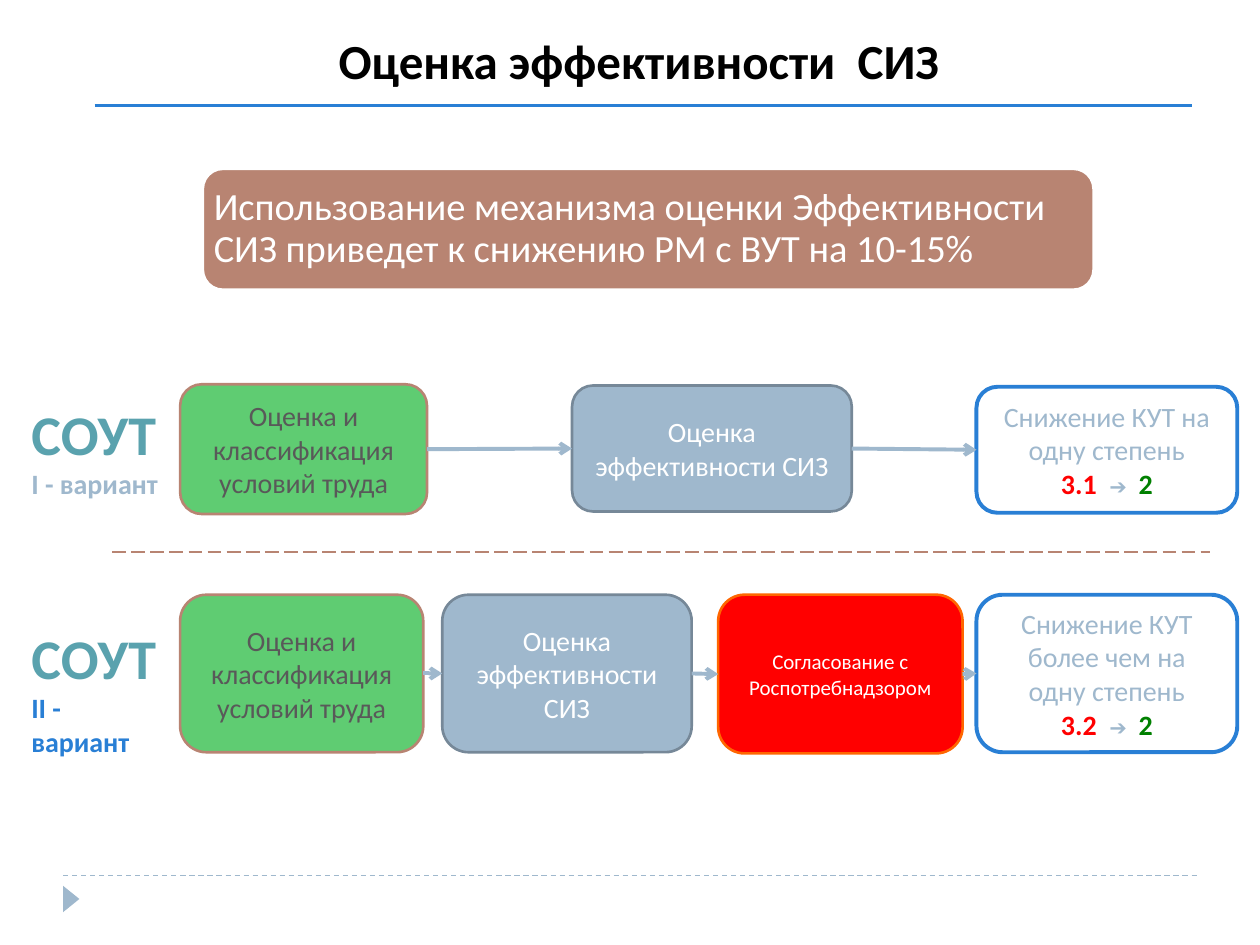
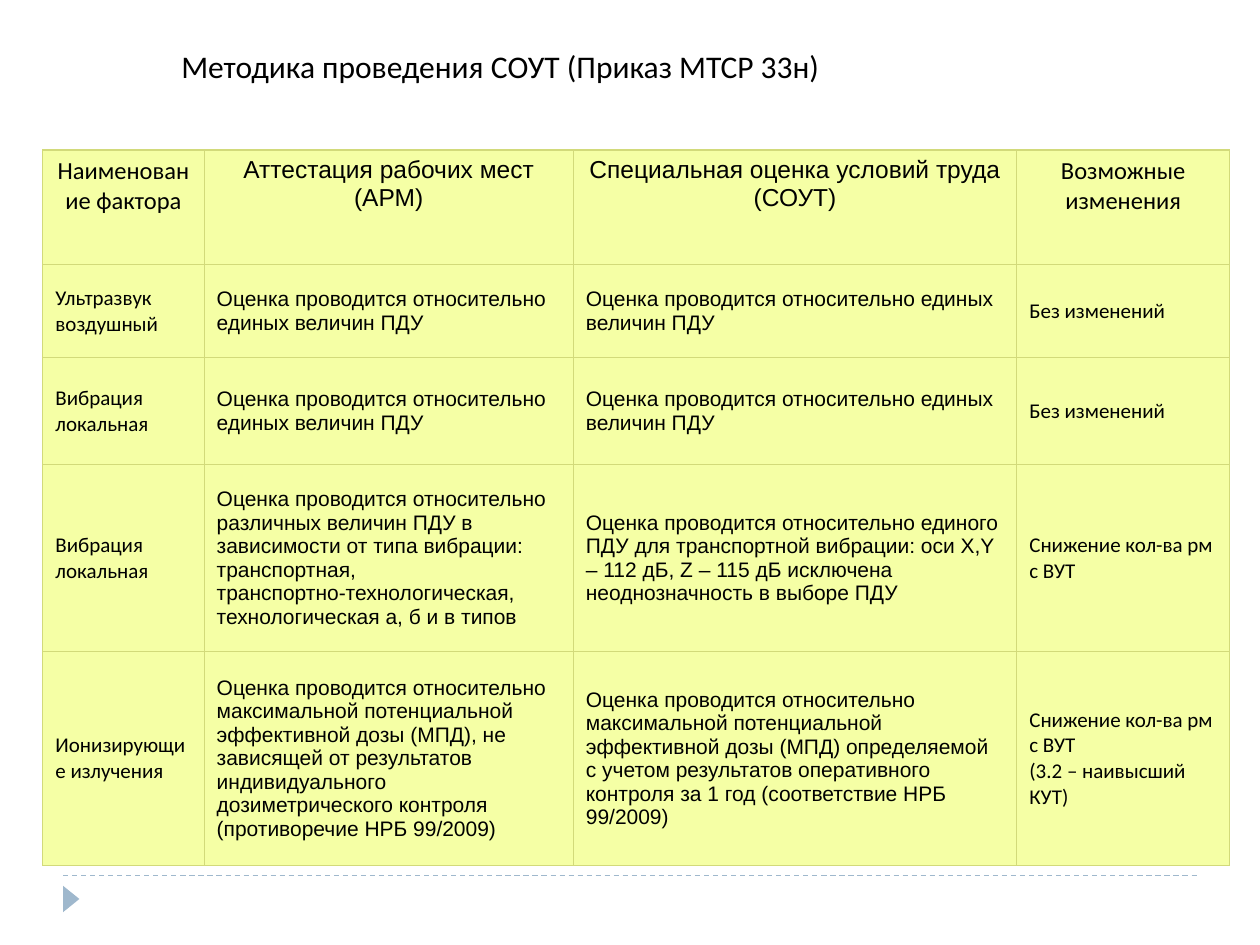
from lxml import etree
from pptx import Presentation
from pptx.dml.color import RGBColor
from pptx.enum.dml import MSO_LINE
from pptx.enum.shapes import MSO_CONNECTOR, MSO_SHAPE
from pptx.enum.text import MSO_ANCHOR, PP_ALIGN
from pptx.oxml.ns import qn
from pptx.util import Inches, Pt

COLORS = {
    "black": "000000", "white": "FFFFFF", "steel": "9FB8CD", "slate": "768898",
    "blue": "297FD5", "teal": "5AA2AE", "brown": "B88472", "mint": "5FCC72",
    "gray": "595959", "red": "FF0000", "orange": "FF6600", "green": "008000",
    "lime": "F5FFA5", "olive": "D2DA7A",
}
BOX_STYLES = {
    "assess": ("mint", "brown", 1.5),
    "ppe": ("steel", "slate", 1.5),
    "approve": ("red", "orange", 1.5),
    "result": ("white", "blue", 2.25),
}
ASSESS = [[("Оценка и классификация условий труда", 16, "gray")]]
PPE = [[("Оценка эффективности СИЗ", 16, "white")]]
APPROVE = [[("Согласование с Роспотребнадзором", 12, "white")]]

SAME_LIMIT = "Оценка проводится относительно единых величин ПДУ"
FEWER = "Снижение кол-ва рм с ВУТ"
COL_WIDTHS = [1.28, 2.93, 3.52, 1.69]
ROW_HEIGHTS = [0.91, 0.74, 0.85, 1.48, 1.7]
COL_FONTS = ["Calibri", "Arial", "Arial", "Calibri"]
ROWS = [
    ["Наименование фактора", "Аттестация рабочих мест (АРМ)",
     "Специальная оценка условий труда (СОУТ)", "Возможные изменения"],
    ["Ультразвук воздушный", SAME_LIMIT, SAME_LIMIT, "Без изменений"],
    ["Вибрация локальная", SAME_LIMIT, SAME_LIMIT, "Без изменений"],
    ["Вибрация локальная",
     "Оценка проводится относительно различных величин ПДУ в зависимости от типа "
     "вибрации: транспортная,\nтранспортно-технологическая, технологическая а, б и в типов",
     "Оценка проводится относительно единого ПДУ для транспортной вибрации: "
     "оси X,Y – 112 дБ, Z – 115 дБ исключена неоднозначность в выборе ПДУ",
     FEWER],
    ["Ионизирующие излучения",
     "Оценка проводится относительно максимальной потенциальной эффективной дозы (МПД), "
     "не зависящей от результатов индивидуального дозиметрического контроля "
     "(противоречие НРБ 99/2009)",
     "Оценка проводится относительно максимальной потенциальной эффективной дозы (МПД) "
     "определяемой с учетом результатов оперативного контроля за 1 год "
     "(соответствие НРБ 99/2009)",
     FEWER + "\n(3.2 – наивысший КУТ)"],
]


def rgb(name):
    """Return the named colour."""
    return RGBColor.from_string(COLORS[name])


def style_run(r, size, color, bold=False, font="Calibri"):
    """Set the font of one run."""
    r.font.name, r.font.size, r.font.bold = font, Pt(size), bold
    r.font.color.rgb = rgb(color)


def write(tf, paragraphs, align=PP_ALIGN.LEFT, anchor=MSO_ANCHOR.MIDDLE, wrap=True):
    """Fill a text frame with paragraphs, each a list of (text, *style) runs."""
    tf.word_wrap, tf.vertical_anchor = wrap, anchor
    for i, runs in enumerate(paragraphs):
        p = tf.add_paragraph() if i else tf.paragraphs[0]
        p.alignment = align
        for text, *style in runs:
            r = p.add_run()
            r.text = text
            style_run(r, *style)


def add_text(s, at, paragraphs, **layout):
    """Add a text box."""
    tf = s.shapes.add_textbox(*map(Inches, at)).text_frame
    write(tf, paragraphs, **layout)


def add_shape(s, kind, at, fill, line=None, width=1.5):
    """Add a flat preset shape."""
    sp = s.shapes.add_shape(kind, *map(Inches, at))
    sp.shadow.inherit = False
    sp.fill.solid()
    sp.fill.fore_color.rgb = rgb(fill)
    if line:
        sp.line.color.rgb = rgb(line)
        sp.line.width = Pt(width)
    else:
        sp.line.fill.background()
    return sp


def add_line(s, start, end, color, width, dash=None):
    """Add a straight line without a shadow."""
    c = s.shapes.add_connector(MSO_CONNECTOR.STRAIGHT, *map(Inches, (*start, *end)))
    c.line.color.rgb = rgb(color)
    c.line.width = Pt(width)
    if dash:
        c.line.dash_style = dash
    etree.SubElement(c._element.spPr, qn("a:effectLst"))
    return c


def add_arrow(s, left, right):
    """Join the facing sides of two boxes with an arrow."""
    c = add_line(s, (0, 0), (0, 0), "steel", 2.25)
    c.begin_connect(left, 3)
    c.end_connect(right, 1)
    etree.SubElement(c.line._get_or_add_ln(), qn("a:tailEnd"), type="arrow")


def result_text(text, level):
    """Return the paragraphs of an outcome box."""
    return [[(text, 16, "steel")],
            [(level + "  ", 16, "red", True), ("➔  ", 12, "steel", True, "Arial"),
             ("2", 16, "green", True)]]


def add_flow(s, boxes):
    """Add a row of boxes chained by arrows."""
    shapes = []
    for style, at, paragraphs in boxes:
        sp = add_shape(s, MSO_SHAPE.ROUNDED_RECTANGLE, at, *BOX_STYLES[style])
        write(sp.text_frame, paragraphs, align=PP_ALIGN.CENTER)
        shapes.append(sp)
    for left, right in zip(shapes, shapes[1:]):
        add_arrow(s, left, right)


def add_variant(s, top, numeral, color):
    """Add the label at the start of a flow."""
    add_text(s, (0.15, top, 1.25, 0.91),
             [[("СОУТ", 32, "teal", True)], [(numeral + " - вариант", 16, color, True)]],
             anchor=MSO_ANCHOR.TOP, wrap=False)


def add_banner(s, text):
    """Add the wide rounded statement."""
    sp = add_shape(s, MSO_SHAPE.ROUNDED_RECTANGLE, (1.61, 1.34, 7.07, 0.96), "brown", "white")
    tf = sp.text_frame
    tf.margin_left = tf.margin_right = Inches(0.04)
    write(tf, [[(text, 22, "white")]])
    tf.paragraphs[0].line_spacing = 0.9


def format_cell(cell, text, font, header):
    """Fill one table cell and draw its borders."""
    cell.fill.solid()
    cell.fill.fore_color.rgb = rgb("lime")
    cell.vertical_anchor = MSO_ANCHOR.TOP if header else MSO_ANCHOR.MIDDLE
    cell.text_frame.text = text
    for p in cell.text_frame.paragraphs:
        p.alignment = PP_ALIGN.CENTER if header else PP_ALIGN.LEFT
        for r in p.runs:
            style_run(r, 14 if header else 12, "black", font=font)
    tc_pr = cell._tc.get_or_add_tcPr()
    for i, side in enumerate(("a:lnL", "a:lnR", "a:lnT", "a:lnB")):
        ln = etree.Element(qn(side), w=str(Pt(0.75)))
        fill = etree.SubElement(ln, qn("a:solidFill"))
        etree.SubElement(fill, qn("a:srgbClr"), val=COLORS["olive"])
        tc_pr.insert(i, ln)


def add_factor_table(s):
    """Add the comparison of assessment methods."""
    frame = s.shapes.add_table(len(ROWS), len(COL_WIDTHS), Inches(0.34), Inches(1.19),
                               Inches(sum(COL_WIDTHS)), Inches(sum(ROW_HEIGHTS)))
    table = frame.table
    table.first_row = table.horz_banding = False
    for column, width in zip(table.columns, COL_WIDTHS):
        column.width = Inches(width)
    for i, (row, height) in enumerate(zip(table.rows, ROW_HEIGHTS)):
        row.height = Inches(height)
        for cell, text, font in zip(row.cells, ROWS[i], COL_FONTS):
            format_cell(cell, text, font, header=i == 0)


def add_slide(prs):
    """Add a blank slide with the shared footer."""
    s = prs.slides.add_slide(prs.slide_layouts[6])
    add_line(s, (0.5, 6.95), (9.5, 6.95), "steel", 0.75, MSO_LINE.DASH)
    marker = add_shape(s, MSO_SHAPE.ISOSCELES_TRIANGLE, (0.46, 7.07, 0.21, 0.13), "steel")
    marker.rotation = 90
    return s


def build_efficiency(prs):
    """Build the slide with the two assessment flows."""
    s = add_slide(prs)
    add_text(s, (1.11, 0.19, 7.92, 0.57),
             [[("Оценка эффективности  СИЗ", 28, "black", True)]],
             align=PP_ALIGN.CENTER, anchor=MSO_ANCHOR.TOP)
    add_line(s, (0.75, 0.84), (9.46, 0.84), "blue", 1.5)
    add_banner(s, "Использование механизма оценки Эффективности СИЗ "
                  "приведет к снижению РМ с ВУТ на 10-15%")
    add_variant(s, 3.12, "I", "steel")
    add_flow(s, [
        ("assess", (1.43, 3.05, 1.96, 1.03), ASSESS),
        ("ppe", (4.54, 3.06, 2.22, 1), PPE),
        ("result", (7.75, 3.07, 2.07, 1), result_text("Снижение КУТ на одну степень", "3.1")),
    ])
    add_line(s, (0.89, 4.38), (9.6, 4.38), "brown", 1, MSO_LINE.LONG_DASH)
    add_variant(s, 4.9, "II", "blue")
    add_flow(s, [
        ("assess", (1.43, 4.72, 1.93, 1.25), ASSESS),
        ("ppe", (3.51, 4.72, 1.98, 1.25), PPE),
        ("approve", (5.7, 4.72, 1.94, 1.26), APPROVE),
        ("result", (7.75, 4.72, 2.07, 1.25),
         result_text("Снижение КУТ более чем на одну степень", "3.2")),
    ])


def build_method(prs):
    """Build the slide with the comparison table."""
    s = add_slide(prs)
    add_text(s, (1.34, 0.21, 7.79, 0.63),
             [[("Методика проведения СОУТ (Приказ МТСР 33н)", 18, "black")]])
    add_factor_table(s)


def main():
    """Build and save the presentation."""
    prs = Presentation()
    prs.slide_width, prs.slide_height = Inches(10), Inches(7.5)
    build_efficiency(prs)
    build_method(prs)
    prs.save("out.pptx")


if __name__ == "__main__":
    main()
